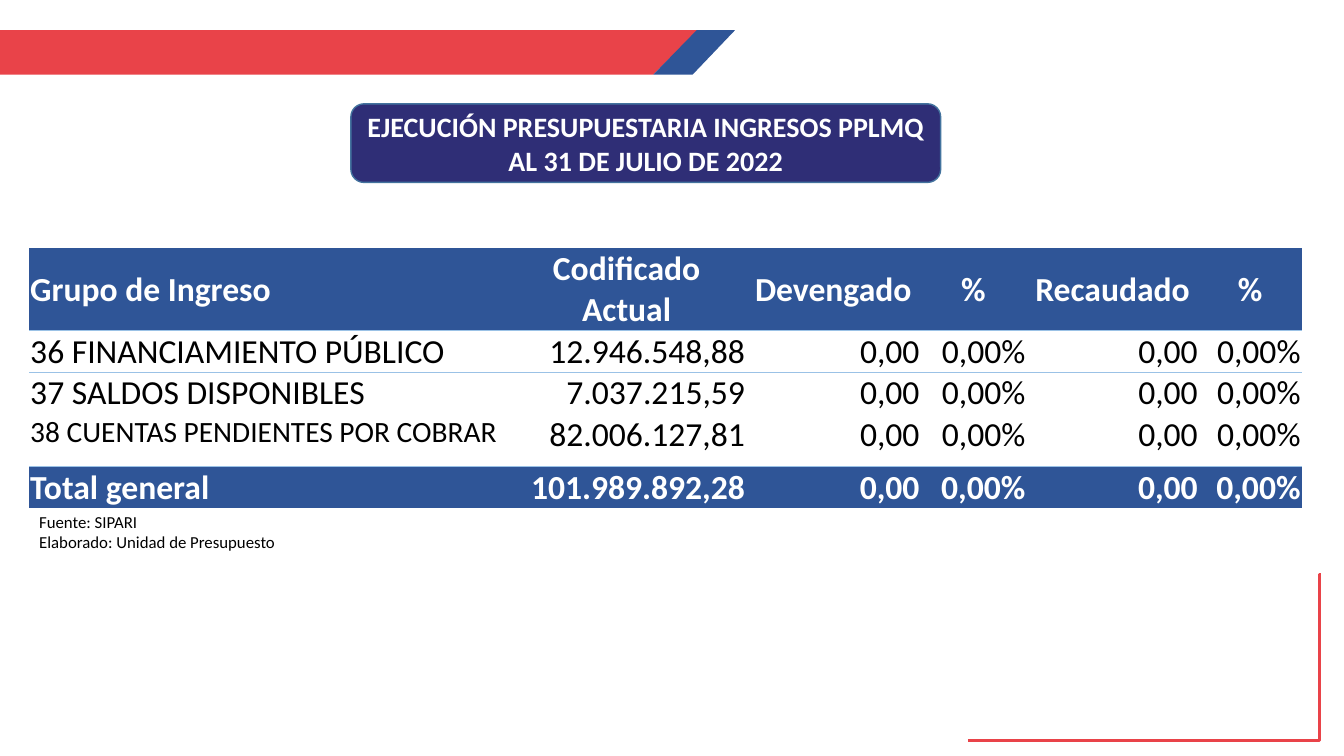
from lxml import etree
from pptx import Presentation
from pptx.dml.color import RGBColor
from pptx.enum.shapes import MSO_CONNECTOR, MSO_SHAPE
from pptx.enum.text import MSO_ANCHOR, MSO_AUTO_SIZE, PP_ALIGN
from pptx.oxml.ns import qn
from pptx.util import Inches, Pt

RED = RGBColor(0xE9, 0x43, 0x49)
BLUE = RGBColor(0x2F, 0x55, 0x97)
NAVY = RGBColor(0x2F, 0x2E, 0x76)
STEEL = RGBColor(0x43, 0x73, 0x9E)
SKY = RGBColor(0x9B, 0xC2, 0xE6)
WHITE = RGBColor(0xFF, 0xFF, 0xFF)
BLACK = RGBColor(0, 0, 0)

ELBOW = MSO_CONNECTOR.ELBOW
ROUNDED_BOX = MSO_SHAPE.FLOWCHART_ALTERNATE_PROCESS
MIDDLE, TOP = MSO_ANCHOR.MIDDLE, MSO_ANCHOR.TOP
NO_AUTOFIT = MSO_AUTO_SIZE.NONE
LEFT, CENTER, RIGHT = PP_ALIGN.LEFT, PP_ALIGN.CENTER, PP_ALIGN.RIGHT

FONT = "Calibri"
PLAIN_TABLE_STYLE = "{2D5ABB26-0587-4C30-8999-92F81FD0307C}"
TITLE_LINES = ["EJECUCIÓN PRESUPUESTARIA INGRESOS PPLMQ", "AL 31 DE JULIO DE 2022"]
SOURCE_LINES = ["Fuente: SIPARI", "Elaborado: Unidad de Presupuesto"]
NO_INCOME = ["0,00", "0,00%"] * 2
INCOME_ROWS = [
    ["Grupo de Ingreso", "Codificado Actual", "Devengado", "%", "Recaudado", "%"],
    ["36 FINANCIAMIENTO PÚBLICO", "12.946.548,88", *NO_INCOME],
    ["37 SALDOS DISPONIBLES", "7.037.215,59", *NO_INCOME],
    ["38 CUENTAS PENDIENTES POR COBRAR", "82.006.127,81", *NO_INCOME],
    ["Total general", "101.989.892,28", *NO_INCOME],
]
COLUMN_WIDTHS = [4.74, 2.37, 1.73, 1.05, 1.71, 1.02]
ROW_HEIGHTS = [0.82, 0.41, 0.41, 0.53, 0.4]
RULED_SIDES = {0: ["a:lnB"], 1: ["a:lnT"], 3: ["a:lnB"], 4: ["a:lnT"]}


def style_paragraph(paragraph, size, color, bold=False, align=LEFT):
    paragraph.alignment = align
    paragraph.font.name = FONT
    paragraph.font.size = Pt(size)
    paragraph.font.bold = bold
    paragraph.font.color.rgb = color


def write_lines(text_frame, lines, **style):
    text_frame.text = "\n".join(lines)
    for paragraph in text_frame.paragraphs:
        style_paragraph(paragraph, **style)


def add_band(slide, points, color):
    corners = [(Inches(x), Inches(y)) for x, y in points]
    builder = slide.shapes.build_freeform(*corners[0], scale=1.0)
    builder.add_line_segments(corners[1:], close=True)
    band = builder.convert_to_shape()
    band.shadow.inherit = False
    band.fill.solid()
    band.fill.fore_color.rgb = color
    band.line.fill.background()


def add_header_bands(slide, top, height):
    bottom = top + height
    add_band(slide, [(0, top), (6.92, top), (6.48, bottom), (0, bottom)], RED)
    add_band(slide, [(6.91, top), (7.29, top), (6.87, bottom), (6.48, bottom)], BLUE)


def add_corner_line(slide, left, top, width, height):
    corner = slide.shapes.add_connector(
        ELBOW, Inches(left), Inches(top + height), Inches(left + width), Inches(top))
    corner.line.color.rgb = RED
    corner.line.width = Pt(2.25)
    properties = corner.element.spPr
    etree.SubElement(properties, qn("a:effectLst"))
    geometry = properties.find(qn("a:prstGeom"))
    adjustments = geometry.find(qn("a:avLst"))
    if adjustments is None:
        adjustments = etree.SubElement(geometry, qn("a:avLst"))
    etree.SubElement(adjustments, qn("a:gd"), name="adj1", fmla="val 99600")


def add_title(slide, left, top, width, height):
    area = [Inches(length) for length in (left, top, width, height)]
    panel = slide.shapes.add_shape(ROUNDED_BOX, *area)
    panel.shadow.inherit = False
    panel.fill.solid()
    panel.fill.fore_color.rgb = NAVY
    panel.line.color.rgb = STEEL
    panel.line.width = Pt(1)

    title = slide.shapes.title
    title.left, title.top, title.width, title.height = area
    write_lines(title.text_frame, TITLE_LINES, size=20, color=WHITE, bold=True, align=CENTER)
    title.text_frame.auto_size = NO_AUTOFIT
    title.text_frame.word_wrap = True
    title.text_frame.vertical_anchor = MIDDLE
    slide.shapes.element.remove(title.element)
    slide.shapes.element.append(title.element)


def add_source_note(slide, left, top, width, height):
    box = slide.shapes.add_textbox(Inches(left), Inches(top), Inches(width), Inches(height))
    box.text_frame.word_wrap = True
    write_lines(box.text_frame, SOURCE_LINES, size=12, color=BLACK)


def rule_cell(cell, sides):
    properties = cell._tc.get_or_add_tcPr()
    for position, side in enumerate(sides):
        line = etree.Element(qn(side), w=str(Pt(0.5)))
        fill = etree.SubElement(line, qn("a:solidFill"))
        etree.SubElement(fill, qn("a:srgbClr"), val=str(SKY))
        properties.insert(position, line)


def fill_cell(cell, text, row, column):
    is_header = row == 0
    is_banded = is_header or row == len(INCOME_ROWS) - 1
    cell.margin_left = cell.margin_right = cell.margin_top = Inches(0.01)
    cell.margin_bottom = 0
    cell.vertical_anchor = MIDDLE if is_banded else TOP
    if is_banded:
        cell.fill.solid()
        cell.fill.fore_color.rgb = BLUE
    else:
        cell.fill.background()
    rule_cell(cell, RULED_SIDES.get(row, []))
    write_lines(
        cell.text_frame, [text],
        size=21 if (row, column) == (3, 0) else 24,
        color=WHITE if is_banded else BLACK,
        bold=is_banded,
        align=LEFT if column == 0 else CENTER if is_header else RIGHT)


def add_income_table(slide, left, top):
    frame = slide.shapes.add_table(
        len(ROW_HEIGHTS), len(COLUMN_WIDTHS), Inches(left), Inches(top),
        Inches(sum(COLUMN_WIDTHS)), Inches(sum(ROW_HEIGHTS)))
    for style in frame.element.iter(qn("a:tableStyleId")):
        style.text = PLAIN_TABLE_STYLE
    table = frame.table
    table.first_row = table.horz_banding = False
    for column, width in zip(table.columns, COLUMN_WIDTHS):
        column.width = Inches(width)
    for row, height in zip(table.rows, ROW_HEIGHTS):
        row.height = Inches(height)
    for row, texts in enumerate(INCOME_ROWS):
        for column, text in enumerate(texts):
            fill_cell(table.cell(row, column), text, row, column)


def main():
    deck = Presentation()
    deck.slide_width, deck.slide_height = Inches(13.33), Inches(7.5)
    slide = deck.slides.add_slide(deck.slide_layouts[5])
    add_header_bands(slide, 0.3, 0.44)
    add_corner_line(slide, 9.6, 5.7, 3.5, 1.65)
    add_title(slide, 3.48, 1.03, 5.85, 0.78)
    add_source_note(slide, 0.29, 5.03, 3.03, 0.5)
    add_income_table(slide, 0.29, 2.46)
    deck.save("out.pptx")


if __name__ == "__main__":
    main()
